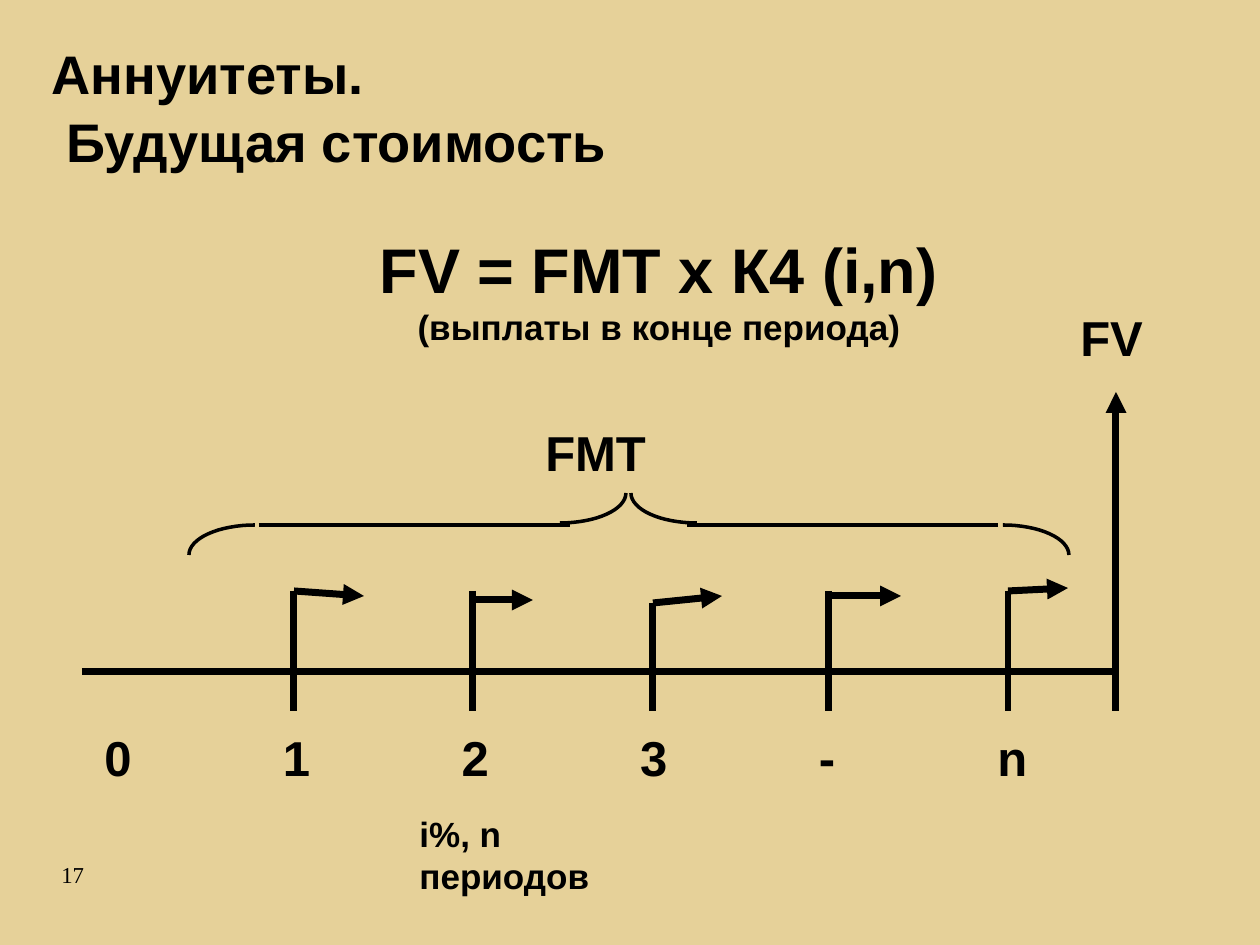
import math

import pptx
import pptx.dml.color
import pptx.enum.text
import pptx.util
from lxml import etree
from pptx.enum.shapes import MSO_CONNECTOR
from pptx.enum.text import MSO_ANCHOR, MSO_AUTO_SIZE, PP_ALIGN

EMU_PER_PX = 914400 / 126
COLORS = {"background": "E6D199", "ink": "000000"}
DRAWING = "{http://schemas.openxmlformats.org/drawingml/2006/main}"
THIN, THICK = 2, 4

TITLE = ["Аннуитеты.", " Будущая стоимость"]
TITLE_BOX = (39, 34, 1140, 142)

# (paragraphs with sizes), box, wraps, alignment
TEXTS = [
    ([("FMT", 28)], (533, 416, 129, 71), False, PP_ALIGN.LEFT),
    ([("FV", 28)], (1068, 301, 112, 71), True, PP_ALIGN.LEFT),
    ([("i%, n периодов", 20)], (407, 806, 270, 54), True, PP_ALIGN.LEFT),
    ([("FV = FMT x К4 (i,n)", 36), ("(выплаты в конце периода)", 20)],
     (364, 224, 590, 205), False, PP_ALIGN.CENTER),
]
SLIDE_NUMBER = ("17", 13, (49, 855, 52, 40))

PERIOD_LABELS = [("0", 52), ("1", 52), ("2", 52), ("3", 52), ("-", 42), ("n", 55)]
LABEL_LEFT, LABEL_STEP, LABEL_TOP, LABEL_HEIGHT = 92, 178.6, 721, 71

AXIS = ((82, 672), (1116, 672))
FUTURE_VALUE_ARROW = ((1116, 711), (1116, 392))
TICK_BOTTOM = 711
# tick x, tick top, payment arrow start and end
PAYMENTS = [
    (294, 591, (294, 591), (364, 596)),
    (473, 591, (476, 600), (533, 600)),
    (653, 603, (653, 603), (722, 596)),
    (829, 591, (827, 596), (901, 596)),
    (1008, 591, (1008, 591), (1068, 588)),
]

BRACE_LINES = [((259, 525), (570, 525)), ((687, 525), (998, 525))]
# ellipse centre, horizontal and vertical direction of the quarter
BRACE_ARCS = [
    ((255, 555), -1, -1),
    ((1003, 555), 1, -1),
    ((560, 493), 1, 1),
    ((697, 493), -1, 1),
]
ARC_RADII = (66, 30)
ARC_STEPS = 16


def emu(px):
    return pptx.util.Emu(round(px * EMU_PER_PX))


def color(name):
    return pptx.dml.color.RGBColor.from_string(COLORS[name])


def format_paragraph(paragraph, size, alignment=PP_ALIGN.LEFT, font="Arial", bold=True):
    paragraph.alignment = alignment
    for run in paragraph.runs:
        run.font.name = font
        run.font.size = pptx.util.Pt(size)
        run.font.bold = bold
        run.font.color.rgb = color("ink")


def add_text(slide, lines, box, wraps=False, alignment=PP_ALIGN.LEFT, **style):
    text_frame = slide.shapes.add_textbox(*map(emu, box)).text_frame
    text_frame.word_wrap = wraps
    text_frame.text = "\n".join(text for text, _ in lines)
    for paragraph, (_, size) in zip(text_frame.paragraphs, lines):
        format_paragraph(paragraph, size, alignment, **style)
    return text_frame


def add_line(slide, start, end, width, arrow=False):
    connector = slide.shapes.add_connector(
        MSO_CONNECTOR.STRAIGHT, *map(emu, (*start, *end)))
    connector.line.color.rgb = color("ink")
    connector.line.width = pptx.util.Pt(width)
    if arrow:
        etree.SubElement(connector.line._get_or_add_ln(), DRAWING + "tailEnd", type="triangle")
    etree.SubElement(connector._element.spPr, DRAWING + "effectLst")


def add_quarter_arc(slide, center, x_sign, y_sign):
    points = []
    for step in range(ARC_STEPS + 1):
        angle = math.pi / 2 * step / ARC_STEPS
        points.append((emu(center[0] + x_sign * ARC_RADII[0] * math.cos(angle)),
                       emu(center[1] + y_sign * ARC_RADII[1] * math.sin(angle))))
    builder = slide.shapes.build_freeform(*points[0])
    builder.add_line_segments(points[1:], close=False)
    arc = builder.convert_to_shape()
    arc.fill.background()
    arc.line.color.rgb = color("ink")
    arc.line.width = pptx.util.Pt(THIN)
    arc.shadow.inherit = False


def add_title(slide):
    title = slide.shapes.title
    title.left, title.top, title.width, title.height = map(emu, TITLE_BOX)
    text_frame = title.text_frame
    text_frame.text = "\n".join(TITLE)
    text_frame.word_wrap = True
    text_frame.auto_size = MSO_AUTO_SIZE.NONE
    text_frame.vertical_anchor = MSO_ANCHOR.MIDDLE
    for paragraph in text_frame.paragraphs:
        format_paragraph(paragraph, 31)
        paragraph.space_before = pptx.util.Pt(0)
        paragraph.line_spacing = 1.05


def main():
    presentation = pptx.Presentation()
    presentation.slide_width = pptx.util.Inches(10)
    presentation.slide_height = pptx.util.Inches(7.5)
    slide = presentation.slides.add_slide(presentation.slide_layouts.get_by_name("Title Only"))
    slide.background.fill.solid()
    slide.background.fill.fore_color.rgb = color("background")

    add_title(slide)
    number, number_size, number_box = SLIDE_NUMBER
    add_text(slide, [(number, number_size)], number_box, font="Times New Roman", bold=False)
    for index, (label, width) in enumerate(PERIOD_LABELS):
        left = LABEL_LEFT + index * LABEL_STEP
        add_text(slide, [(label, 28)], (left, LABEL_TOP, width, LABEL_HEIGHT))
    for text in TEXTS:
        add_text(slide, *text)

    for arc in BRACE_ARCS:
        add_quarter_arc(slide, *arc)
    for start, end in BRACE_LINES:
        add_line(slide, start, end, THIN)

    add_line(slide, *AXIS, THICK)
    add_line(slide, *FUTURE_VALUE_ARROW, THICK, arrow=True)
    for x, top, start, end in PAYMENTS:
        add_line(slide, (x, top), (x, TICK_BOTTOM), THICK)
        add_line(slide, start, end, THICK, arrow=True)

    presentation.save("out.pptx")


if __name__ == "__main__":
    main()
